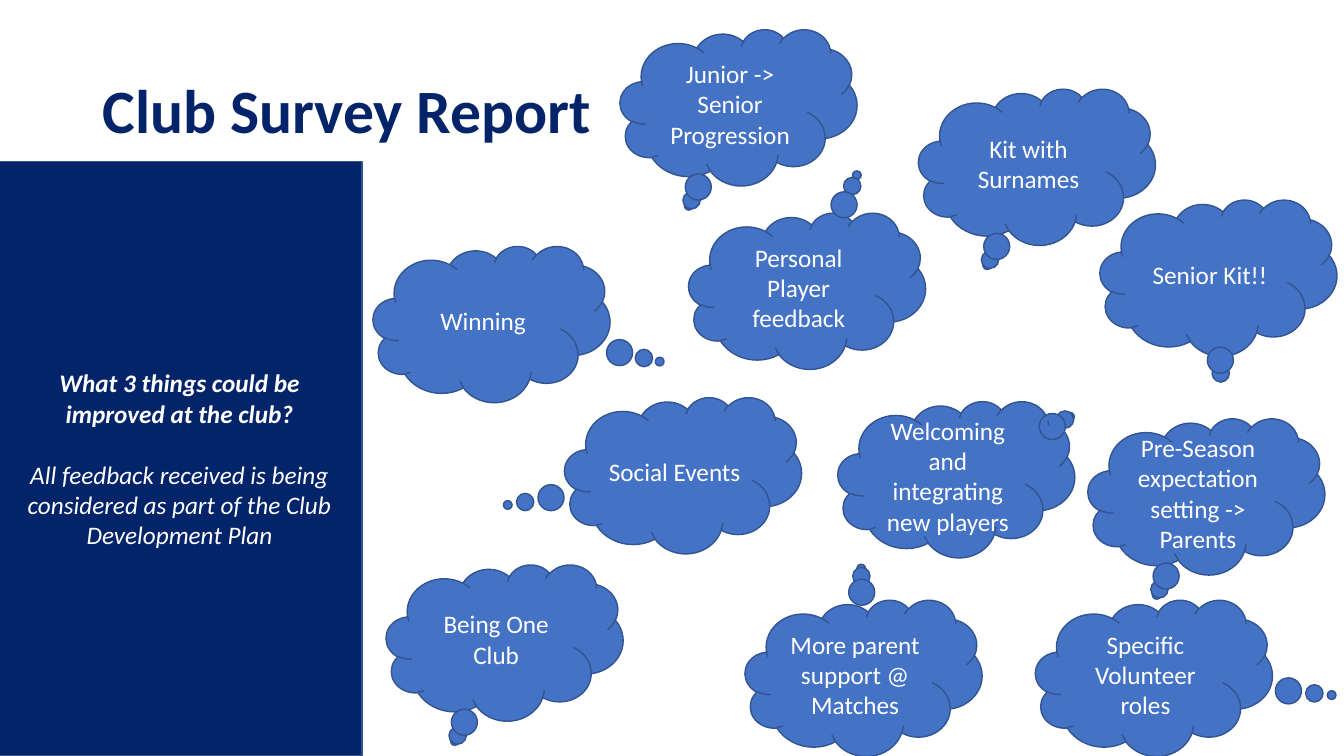
from pptx import Presentation
from pptx.dml.color import RGBColor
from pptx.enum.shapes import MSO_SHAPE
from pptx.enum.text import MSO_ANCHOR, PP_ALIGN
from pptx.util import Inches, Pt

RECTANGLE = MSO_SHAPE.RECTANGLE
CLOUD = MSO_SHAPE.CLOUD_CALLOUT
MIDDLE = MSO_ANCHOR.MIDDLE
CENTER = PP_ALIGN.CENTER

# Content
TITLE = "Club Survey Report"
QUESTION = "What 3 things could be improved at the club?"
ANSWER = "All feedback received is being considered as part of the Club Development Plan"

# Bubble tail tip, as shares of the cloud's size from its centre
DOWN_LEFT = (-0.21, 0.63)

# Feedback: text, left, top, tail
FEEDBACK = [
    ("Junior -> Senior Progression", 6.15, 0.29, DOWN_LEFT),
    ("Senior Kit!!", 10.91, 1.98, (0.01, 0.64)),
    ("Pre-Season expectation setting -> Parents", 10.79, 4.15, DOWN_LEFT),
    ("Being One Club", 3.83, 5.6, DOWN_LEFT),
    ("More parent support @ Matches", 7.39, 5.95, (-0.01, -0.7)),
    ("Welcoming and integrating new players", 8.31, 3.98, (0.48, -0.4)),
    ("Winning", 3.7, 2.44, (0.71, 0.24)),
    ("Personal Player feedback", 6.83, 2.11, (0.21, -0.74)),
    ("Kit with Surnames", 9.11, 0.88, DOWN_LEFT),
    ("Specific Volunteer roles", 10.27, 5.95, (0.75, 0.11)),
    ("Social Events", 5.6, 3.94, (-0.74, 0.19)),
]

# Style
FONT = "Calibri"
NAVY, BLUE, OUTLINE, WHITE = "032469", "4472C4", "325491", "FFFFFF"
BODY_SIZE = 18
CLOUD_SIZE = (2.35, 1.55)


def color(value):
    return RGBColor.from_string(value)


def style(para, size, ink, bold=False, italic=False):
    for span in para.runs:
        span.font.name = FONT
        span.font.size = Pt(size)
        span.font.bold = bold
        span.font.italic = italic
        span.font.color.rgb = color(ink)


def add_filled(page, kind, area, fill):
    shape = page.shapes.add_shape(kind, *map(Inches, area))
    shape.shadow.inherit = False
    shape.fill.solid()
    shape.fill.fore_color.rgb = color(fill)
    shape.line.color.rgb = color(OUTLINE)
    shape.line.width = Pt(1)
    shape.text_frame.word_wrap = True
    shape.text_frame.vertical_anchor = MIDDLE
    return shape


def add_title(page):
    box = page.shapes.add_textbox(*map(Inches, (0.92, 0.4, 11.5, 1.45)))
    frame = box.text_frame
    frame.word_wrap = True
    frame.vertical_anchor = MIDDLE
    frame.text = TITLE
    para = frame.paragraphs[0]
    para.line_spacing = 0.9
    style(para, 44, NAVY, bold=True)


def add_panel(page):
    frame = add_filled(page, RECTANGLE, (-0.03, 1.6, 3.62, 5.9), NAVY).text_frame
    frame.text = QUESTION
    question, answer = frame.paragraphs[0], frame.add_paragraph()
    answer.text = ANSWER
    answer.space_before = Pt(22)
    for para in (question, answer):
        para.alignment = CENTER
        style(para, BODY_SIZE, WHITE, bold=para is question, italic=True)


def add_cloud(page, text, left, top, tail):
    cloud = add_filled(page, CLOUD, (left, top, *CLOUD_SIZE), BLUE)
    for index, share in enumerate(tail):
        cloud.adjustments[index] = share
    cloud.text_frame.text = text
    para = cloud.text_frame.paragraphs[0]
    para.alignment = CENTER
    style(para, BODY_SIZE, WHITE)


def main():
    deck = Presentation()
    deck.slide_width, deck.slide_height = Inches(13.33), Inches(7.5)
    page = deck.slides.add_slide(deck.slide_layouts[6])
    add_title(page)
    add_panel(page)
    for item in FEEDBACK:
        add_cloud(page, *item)
    deck.save("out.pptx")


if __name__ == "__main__":
    main()
